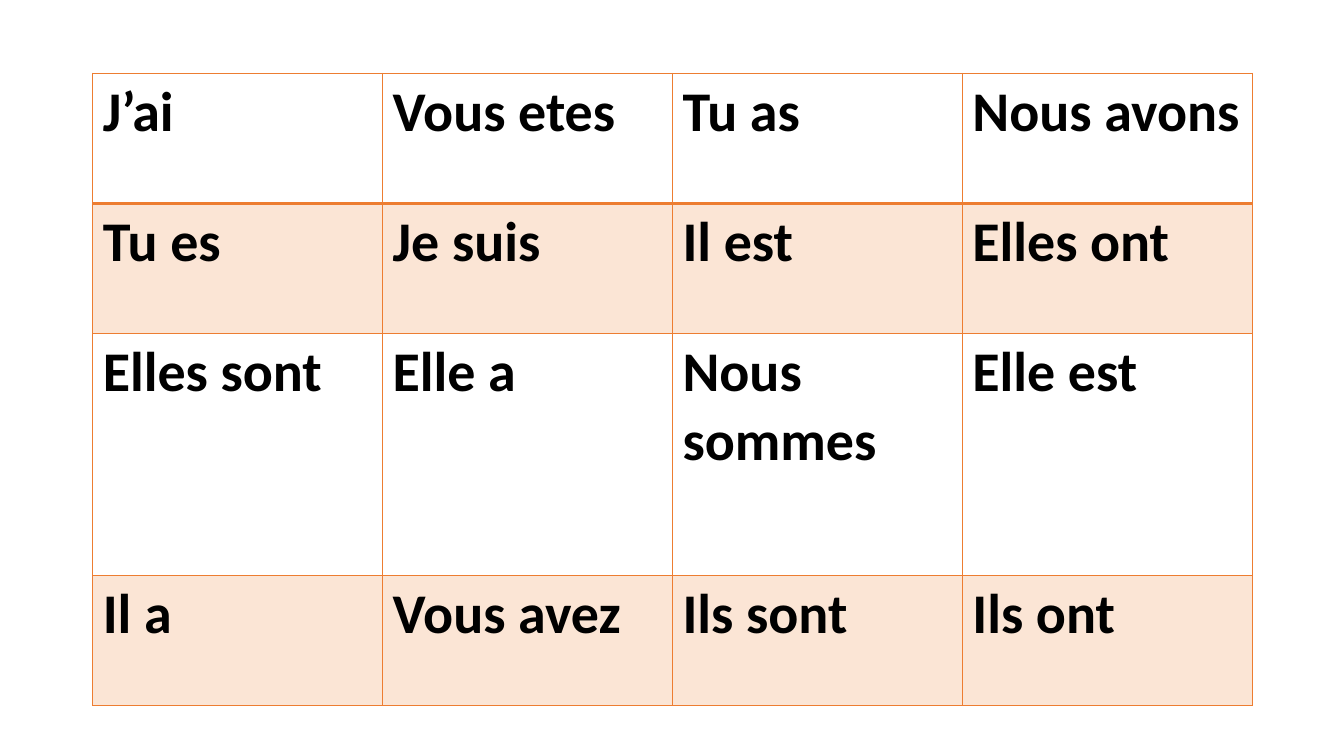
from lxml import etree
from pptx import Presentation
from pptx.dml.color import RGBColor
from pptx.oxml.ns import qn
from pptx.util import Inches, Pt

ORANGE = "ED7D31"
BLACK = "000000"
FONT = {"name": "Calibri", "size": Pt(40), "bold": True}
BAND_ALPHA = "20000"

verb_rows = [
    ["J’ai", "Vous etes", "Tu as", "Nous avons"],
    ["Tu es", "Je suis", "Il est", "Elles ont"],
    ["Elles sont", "Elle a", "Nous sommes", "Elle est"],
    ["Il a", "Vous avez", "Ils sont", "Ils ont"],
]
row_heights = [1.29, 1.29, 2.4, 1.29]
table_width = 11.5


def color(value):
    return RGBColor.from_string(value)


def add_border(cell, side, points):
    line = etree.SubElement(
        cell._tc.get_or_add_tcPr(), qn(f"a:ln{side}"), w=str(Pt(points))
    )
    fill = etree.SubElement(line, qn("a:solidFill"))
    etree.SubElement(fill, qn("a:srgbClr"), val=ORANGE)


prs = Presentation()
prs.slide_width = Inches(13.33)
prs.slide_height = Inches(7.5)
slide = prs.slides.add_slide(prs.slide_layouts[6])

verbs = slide.shapes.add_table(
    len(verb_rows), len(verb_rows[0]),
    Inches(0.92), Inches(0.73), Inches(table_width), Inches(sum(row_heights)),
).table
verbs.horz_banding = False

for column in verbs.columns:
    column.width = Inches(table_width / len(verb_rows[0]))

for r, (phrases, height) in enumerate(zip(verb_rows, row_heights)):
    verbs.rows[r].height = Inches(height)
    for c, phrase in enumerate(phrases):
        cell = verbs.cell(r, c)
        cell.text = phrase
        font = cell.text_frame.paragraphs[0].runs[0].font
        for attribute, value in FONT.items():
            setattr(font, attribute, value)
        font.color.rgb = color(BLACK)

        borders = {"L": 1, "R": 1, "T": 2 if r == 1 else 1, "B": 2 if r == 0 else 1}
        for side, points in borders.items():
            add_border(cell, side, points)

        if r % 2:
            cell.fill.solid()
            cell.fill.fore_color.rgb = color(ORANGE)
            tint = cell._tc.tcPr.find(qn("a:solidFill")).find(qn("a:srgbClr"))
            etree.SubElement(tint, qn("a:alpha"), val=BAND_ALPHA)
        else:
            cell.fill.background()

prs.save("out.pptx")
